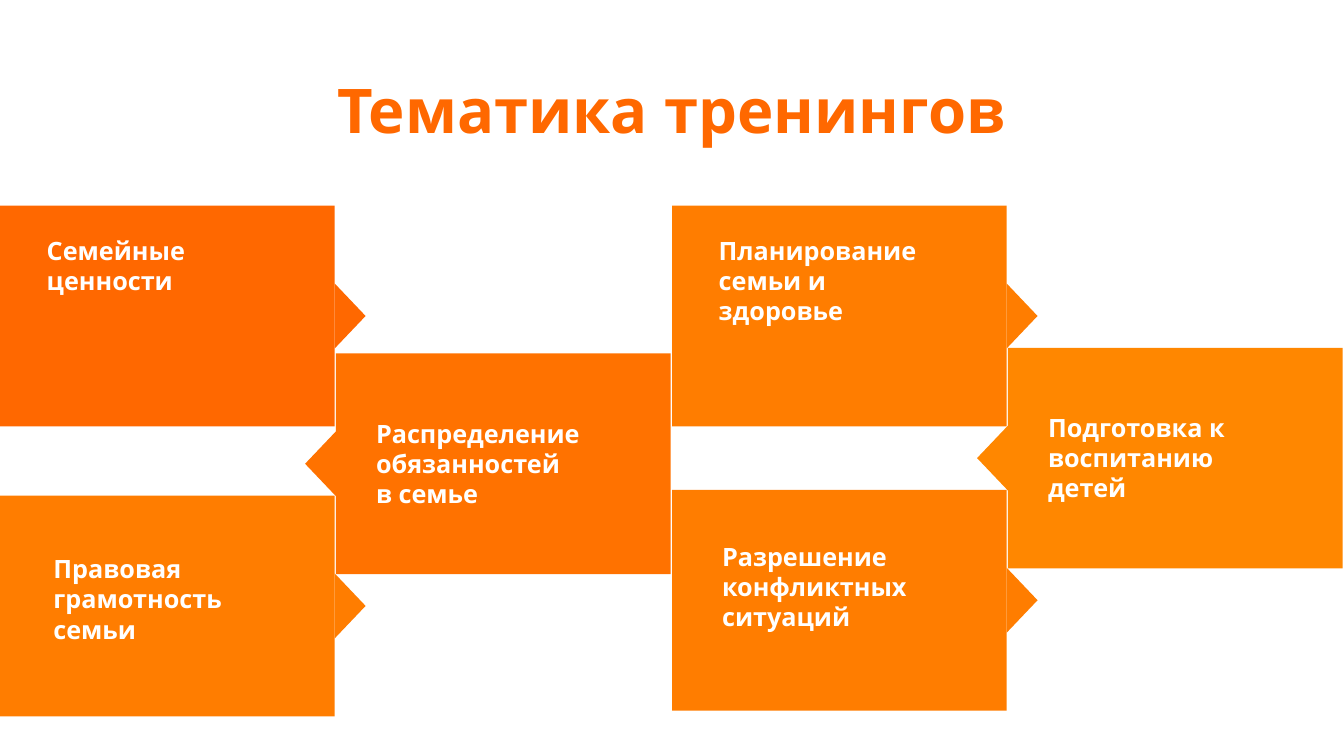
from dataclasses import dataclass

from pptx import Presentation
from pptx.dml.color import RGBColor
from pptx.enum.shapes import MSO_SHAPE as Shape
from pptx.enum.text import MSO_ANCHOR as Anchor, MSO_AUTO_SIZE as AutoSize, PP_ALIGN as Align
from pptx.util import Inches, Pt

WIDTH, HEIGHT = Inches(13.333), Inches(7.5)
COLUMN, ROW = WIDTH / 4, HEIGHT * 0.188
FIRST_ROW = HEIGHT * 0.272
CARD_WIDTH, CARD_HEIGHT = WIDTH * 0.249, HEIGHT * 0.292
POINTER_DEPTH, POINTER_HALF = WIDTH * 0.023, HEIGHT * 0.043
LABEL_WIDTH, LABEL_HEIGHT = WIDTH * 0.168, HEIGHT * 0.135


@dataclass(frozen=True)
class Theme:
    font: str = "Open Sans"
    title_size: int = 44
    label_size: int = 18
    title: str = "FF6800"
    label: str = "FFFFFF"
    deep: str = "FF6800"
    warm: str = "FF7200"
    bright: str = "FF7D00"
    light: str = "FF8700"


THEME = Theme()

TOPICS = [
    ("Семейные ценности", 0, 0, THEME.deep, "right", 0.11, 0.11),
    ("Распределение обязанностей в семье", 1, 1.04, THEME.warm, "left", 0.09, 0.27),
    ("Планирование семьи и здоровье", 2, 0, THEME.bright, "right", 0.11, 0.11),
    ("Подготовка к воспитанию детей", 3, 1, THEME.light, "left", 0.09, 0.27),
    ("Правовая грамотность семьи", 0, 2.04, THEME.bright, "right", 0.13, 0.24),
    ("Разрешение конфликтных ситуаций", 2, 2, THEME.bright, "right", 0.12, 0.21),
]


def paint(shape, color):
    shape.shadow.inherit = False
    shape.fill.solid()
    shape.fill.fore_color.rgb = RGBColor.from_string(color)
    shape.line.fill.background()


def add_text(slide, text, left, top, width, height, size, color):
    box = slide.shapes.add_textbox(int(left), int(top), int(width), int(height))
    box.text_frame.word_wrap = True
    paragraph = box.text_frame.paragraphs[0]
    paragraph.text = text
    paragraph.font.name = THEME.font
    paragraph.font.size = Pt(size)
    paragraph.font.bold = True
    paragraph.font.color.rgb = RGBColor.from_string(color)
    return box.text_frame


def add_title(slide, text):
    title = add_text(slide, text, WIDTH * 0.069, HEIGHT * 0.053, WIDTH * 0.862,
                     HEIGHT * 0.193, THEME.title_size, THEME.title)
    title.vertical_anchor = Anchor.MIDDLE
    title.paragraphs[0].alignment = Align.CENTER
    title.paragraphs[0].line_spacing = 0.9


def add_pointer(slide, edge, middle, depth, color):
    outline = slide.shapes.build_freeform(int(edge), int(middle - POINTER_HALF))
    outline.add_line_segments([(int(edge + depth), int(middle)),
                               (int(edge), int(middle + POINTER_HALF))])
    paint(outline.convert_to_shape(), color)


def add_topic(slide, text, column, row, color, side, inset_x, inset_y):
    left, top = column * COLUMN, FIRST_ROW + row * ROW
    card = slide.shapes.add_shape(Shape.RECTANGLE, int(left), int(top),
                                  int(CARD_WIDTH), int(CARD_HEIGHT))
    paint(card, color)
    edge, depth = ((left + CARD_WIDTH, POINTER_DEPTH) if side == "right"
                   else (left, -POINTER_DEPTH))
    add_pointer(slide, edge, top + CARD_HEIGHT / 2, depth, color)
    label = add_text(slide, text, left + inset_x * CARD_WIDTH, top + inset_y * CARD_HEIGHT,
                     LABEL_WIDTH, LABEL_HEIGHT, THEME.label_size, THEME.label)
    label.auto_size = AutoSize.SHAPE_TO_FIT_TEXT


def main():
    deck = Presentation()
    deck.slide_width, deck.slide_height = WIDTH, HEIGHT
    slide = deck.slides.add_slide(deck.slide_layouts[6])
    add_title(slide, "Тематика тренингов")
    for topic in TOPICS:
        add_topic(slide, *topic)
    deck.save("out.pptx")


if __name__ == "__main__":
    main()
